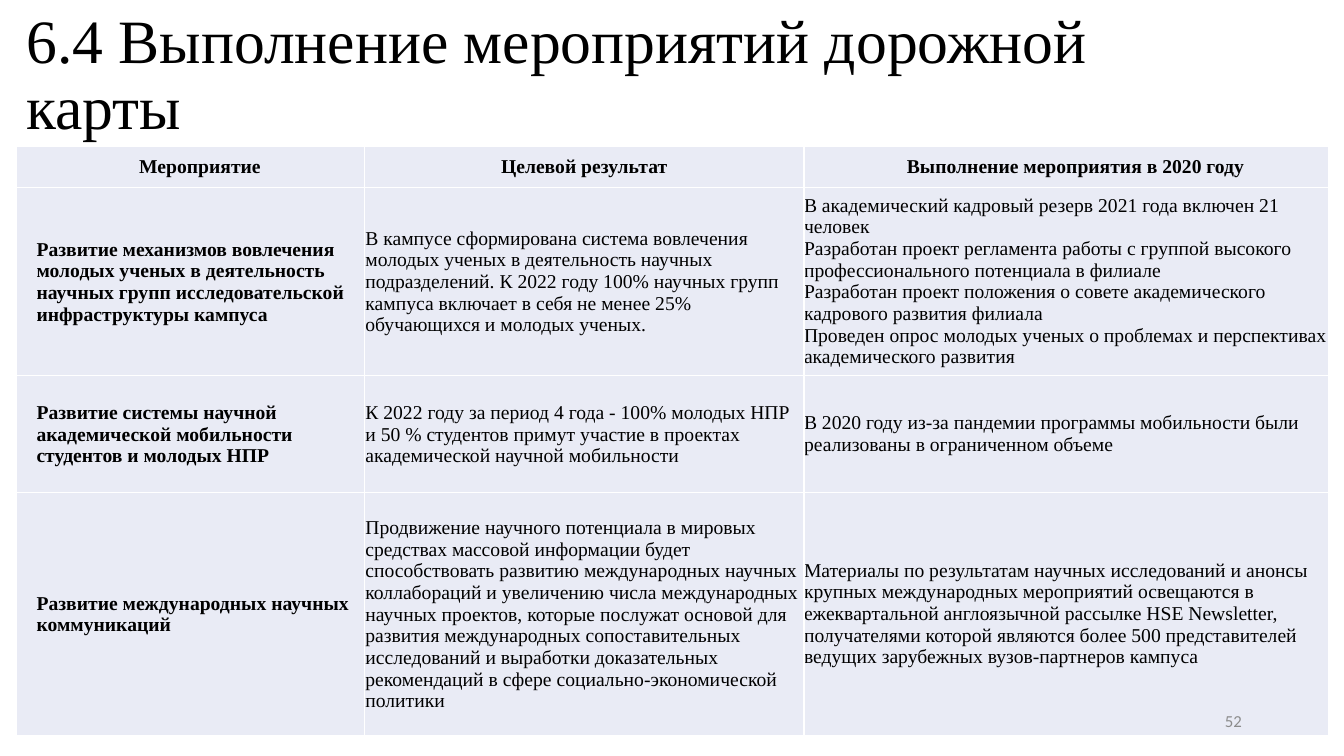
from lxml import etree
from pptx import Presentation
from pptx.dml.color import RGBColor
from pptx.enum.text import MSO_ANCHOR, PP_ALIGN
from pptx.oxml.ns import qn
from pptx.util import Pt

MIDDLE = MSO_ANCHOR.MIDDLE
LEFT, CENTER, RIGHT = PP_ALIGN.LEFT, PP_ALIGN.CENTER, PP_ALIGN.RIGHT

BLACK = RGBColor(0x00, 0x00, 0x00)
GRAY = RGBColor(0x8C, 0x8C, 0x8C)
WHITE = RGBColor(0xFF, 0xFF, 0xFF)
CELL_FILL = RGBColor(0xE9, 0xEB, 0xF5)
SERIF = "Times New Roman"
SANS = "Calibri"

COLUMN_WIDTHS = [248.6, 314, 374.4]
ROW_HEIGHTS = [29.2, 125, 83.5, 173.5]
WIDE_INSET = (14.4, 0.7, 0.7, 0)
NARROW_INSET = (0.7, 0.7, 0.7, 0)
NO_INSET = (0, 0, 0, 0)
HEADER_INSETS = [WIDE_INSET, NARROW_INSET, WIDE_INSET]
BODY_INSETS = [WIDE_INSET, NARROW_INSET, NO_INSET]

ROADMAP = [
    [
        ["Мероприятие"],
        ["Целевой результат"],
        ["Выполнение мероприятия в 2020 году"],
    ],
    [
        ["Развитие механизмов вовлечения молодых ученых в деятельность научных групп "
         "исследовательской инфраструктуры кампуса"],
        ["В кампусе сформирована система вовлечения молодых ученых в деятельность научных "
         "подразделений. К 2022 году 100% научных групп кампуса включает в себя не менее 25% "
         "обучающихся и молодых ученых."],
        ["В академический кадровый резерв 2021 года включен 21 человек",
         "Разработан проект регламента работы с группой высокого профессионального "
         "потенциала в филиале",
         "Разработан проект положения о совете академического кадрового развития филиала",
         "Проведен опрос молодых ученых о проблемах и перспективах академического развития"],
    ],
    [
        ["Развитие системы научной академической мобильности студентов и молодых НПР"],
        ["К 2022 году за период 4 года - 100% молодых НПР и 50 % студентов примут участие "
         "в проектах академической научной мобильности"],
        ["В 2020 году из-за пандемии программы мобильности были реализованы "
         "в ограниченном объеме"],
    ],
    [
        ["Развитие международных научных коммуникаций"],
        ["Продвижение научного потенциала в мировых средствах массовой информации будет "
         "способствовать развитию международных научных коллабораций и увеличению числа "
         "международных научных проектов, которые послужат основой для развития "
         "международных сопоставительных исследований и выработки доказательных "
         "рекомендаций в сфере социально-экономической политики"],
        ["Материалы по результатам научных исследований и анонсы крупных международных "
         "мероприятий освещаются в ежеквартальной англоязычной рассылке HSE Newsletter, "
         "получателями которой являются более 500 представителей ведущих зарубежных "
         "вузов-партнеров кампуса"],
    ],
]


def write_paragraphs(frame, texts, size, font_name, color, alignment=LEFT, bold=False):
    for index, text in enumerate(texts):
        paragraph = frame.paragraphs[0] if index == 0 else frame.add_paragraph()
        paragraph.alignment = alignment
        run = paragraph.add_run()
        run.text = text
        run.font.size = Pt(size)
        run.font.name = font_name
        run.font.bold = bold
        run.font.color.rgb = color


def add_label(slide, box, text, size, font_name, color, alignment=LEFT, spacing=1.0):
    shape = slide.shapes.add_textbox(*[Pt(length) for length in box])
    frame = shape.text_frame
    frame.word_wrap = True
    frame.vertical_anchor = MIDDLE
    write_paragraphs(frame, [text], size, font_name, color, alignment)
    frame.paragraphs[0].line_spacing = spacing


def add_borders(cell):
    properties = cell._tc.get_or_add_tcPr()
    for side in ("a:lnL", "a:lnR", "a:lnT", "a:lnB"):
        line = etree.SubElement(properties, qn(side), w=str(Pt(1)))
        fill = etree.SubElement(line, qn("a:solidFill"))
        etree.SubElement(fill, qn("a:srgbClr"), val=str(WHITE))


def format_cell(cell, inset, texts, alignment, bold):
    add_borders(cell)
    cell.fill.solid()
    cell.fill.fore_color.rgb = CELL_FILL
    cell.vertical_anchor = MIDDLE
    left, top, right, bottom = inset
    cell.margin_left, cell.margin_top = Pt(left), Pt(top)
    cell.margin_right, cell.margin_bottom = Pt(right), Pt(bottom)
    write_paragraphs(cell.text_frame, texts, 14, SERIF, BLACK, alignment, bold)


def add_roadmap_table(slide, left, top, height):
    table_frame = slide.shapes.add_table(
        len(ROW_HEIGHTS), len(COLUMN_WIDTHS), Pt(left), Pt(top),
        Pt(sum(COLUMN_WIDTHS)), Pt(height))
    table = table_frame.table
    for column, width in zip(table.columns, COLUMN_WIDTHS):
        column.width = Pt(width)
    for row, row_height in zip(table.rows, ROW_HEIGHTS):
        row.height = Pt(row_height)
    table_frame.height = Pt(height)
    for row_index, row_texts in enumerate(ROADMAP):
        is_header = row_index == 0
        insets = HEADER_INSETS if is_header else BODY_INSETS
        for column_index, texts in enumerate(row_texts):
            format_cell(table.cell(row_index, column_index), insets[column_index], texts,
                        CENTER if is_header else LEFT, is_header or column_index == 0)


def main():
    presentation = Presentation()
    presentation.slide_width, presentation.slide_height = Pt(960), Pt(540)
    slide = presentation.slides.add_slide(presentation.slide_layouts[6])
    add_label(slide, (11.8, 2.5, 828, 104.4), "6.4 Выполнение мероприятий дорожной карты",
              44, SERIF, BLACK, spacing=0.9)
    add_roadmap_table(slide, 11.7, 104.6, 420.5)
    add_label(slide, (678.2, 500.5, 216, 28.8), "52", 12, SANS, GRAY, RIGHT)
    presentation.save("out.pptx")


if __name__ == "__main__":
    main()
